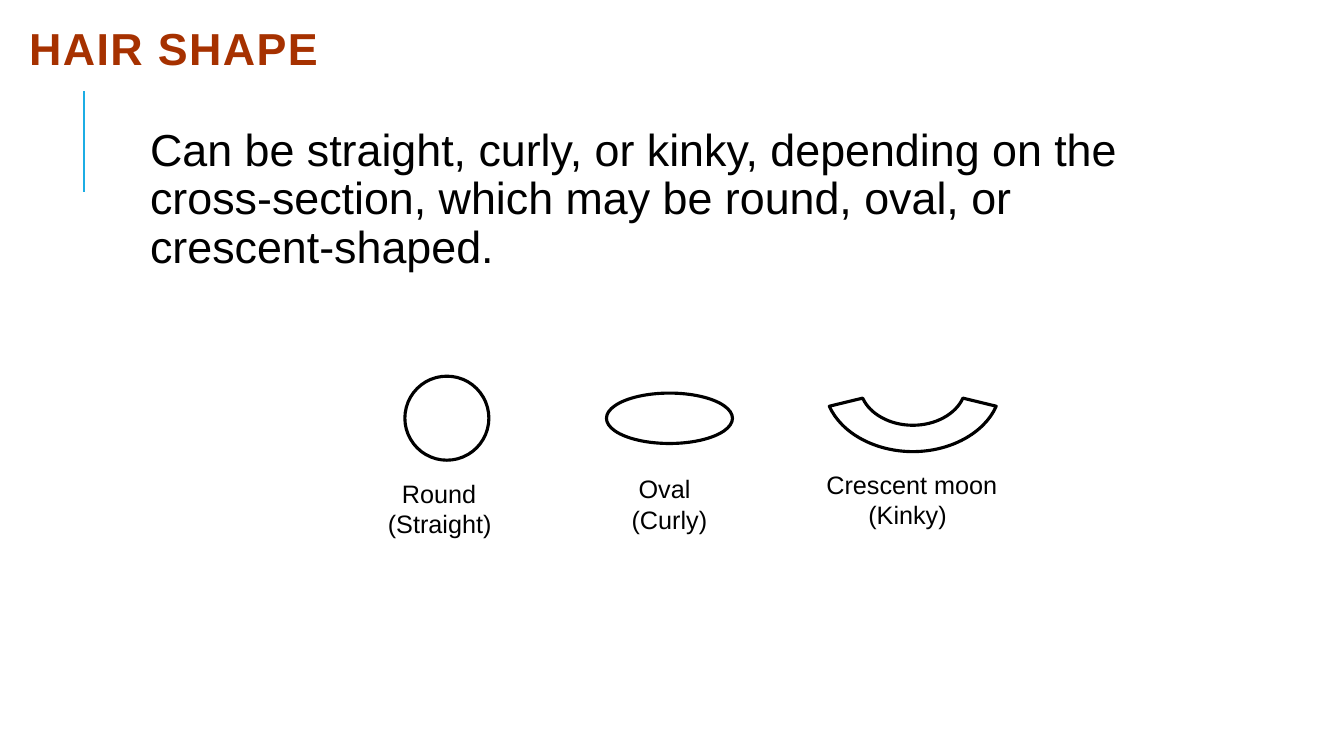
from lxml import etree
from pptx import Presentation
from pptx.dml.color import RGBColor
from pptx.enum.shapes import MSO_CONNECTOR, MSO_SHAPE
from pptx.oxml.ns import qn
from pptx.util import Pt

ELLIPSE = MSO_SHAPE.OVAL
STRAIGHT = MSO_CONNECTOR.STRAIGHT
COLORS = {"title": "A63100", "ink": "000000", "accent": "1CADE4"}
FONT = "Arial"


def add_text(page, box, lines, size, color="ink", bold=False, spacing=None,
             wrap=True, tracking=0):
    """Write (text, indent) lines into a text box and return its paragraphs."""
    frame = page.shapes.add_textbox(*map(Pt, box)).text_frame
    frame.word_wrap = wrap
    for number, (text, indent) in enumerate(lines):
        para = frame.add_paragraph() if number else frame.paragraphs[0]
        para.line_spacing = spacing
        if indent:
            para._p.get_or_add_pPr().set("marL", str(Pt(indent)))
        span = para.add_run()
        span.text = text
        span.font.name = FONT
        span.font.size = Pt(size)
        span.font.bold = bold
        span.font.color.rgb = RGBColor.from_string(COLORS[color])
        if tracking:
            span._r.get_or_add_rPr().set("spc", str(tracking * 100))
    return frame.paragraphs


def outline(shape):
    """Leave a shape unfilled with a black outline."""
    shape.shadow.inherit = False
    shape.fill.background()
    shape.line.color.rgb = RGBColor.from_string(COLORS["ink"])
    shape.line.width = Pt(2.25)


def add_ellipse(page, box):
    """Draw an outlined ellipse that fills the box."""
    outline(page.shapes.add_shape(ELLIPSE, *map(Pt, box)))


def add_crescent(page, box):
    """Draw a crescent of four curves along the bottom of the box."""
    left, top, width, height = box
    right, bottom, middle = left + width, top + height, width / 2
    builder = page.shapes.build_freeform(Pt(left), Pt(top))
    builder.add_line_segments(
        [(Pt(right), Pt(top)), (Pt(right), Pt(bottom)), (Pt(left), Pt(bottom))])
    crescent = builder.convert_to_shape()
    outline(crescent)
    inner, outer = height - 18.8, height
    steps = [
        ("moveTo", [(27.2, 57.6)]),
        ("cubicBezTo", [(32.4, 69.1), (46.8, inner), (middle, inner)]),
        ("cubicBezTo", [(79.2, inner), (93.6, 69.1), (98.8, 57.6)]),
        ("lnTo", [(122.6, 63.4)]),
        ("cubicBezTo", [(114, 82.8), (89.6, outer), (middle, outer)]),
        ("cubicBezTo", [(36.4, outer), (12, 82.8), (3.4, 63.4)]),
        ("close", []),
    ]
    contour = next(crescent._element.iter(qn("a:path")))
    for child in list(contour):
        contour.remove(child)
    for command, points in steps:
        step = etree.SubElement(contour, qn(f"a:{command}"))
        for x, y in points:
            etree.SubElement(step, qn("a:pt"), x=str(Pt(x)), y=str(Pt(y)))


def add_heading(page, box):
    """Place the slide title and the accent rule below it."""
    left, top, _, _ = box
    add_text(page, box, [("HAIR SHAPE", 0)], 32, "title", bold=True,
             spacing=0.8, tracking=1)
    x = left + 46
    rule = page.shapes.add_connector(
        STRAIGHT, Pt(x), Pt(top + 118.3), Pt(x), Pt(top + 46.3))
    rule.line.color.rgb = RGBColor.from_string(COLORS["accent"])
    rule.line.width = Pt(1.5)
    etree.SubElement(rule._element.spPr, qn("a:effectLst"))


def add_body(page, box):
    """Place the explanatory paragraph."""
    text = ("Can be straight, curly, or kinky, depending on the cross-section, "
            "which may be round, oval, or crescent-shaped.")
    para = add_text(page, box, [(text, 0)], 32, spacing=0.9)[0]
    para.space_before = Pt(12)
    para.space_after = Pt(2)


def add_cross_sections(page, box):
    """Place the three hair outlines with their captions."""
    left, top, _, _ = box
    sections = [
        (add_ellipse, (19.2, 41.9, 60, 60), (0, 111, 89.3, 51.1),
         [("Round", 10), ("(Straight)", 0)]),
        (add_ellipse, (163.2, 54, 90, 36), (174.1, 108, 72, 52.6),
         [("Oval", 5), ("(Curly)", 0)]),
        (add_crescent, (319, 0, 126, 95.8), (313.2, 104.8, 137.5, 51.1),
         [("Crescent moon", 0), ("(Kinky)", 30)]),
    ]
    for draw, (x, y, *size), (label_x, label_y, *label_size), lines in sections:
        draw(page, (left + x, top + y, *size))
        add_text(page, (left + label_x, top + label_y, *label_size), lines, 18,
                 wrap=False)


def main():
    """Build the hair shape slide and save it."""
    deck = Presentation()
    deck.slide_width, deck.slide_height = Pt(960), Pt(540)
    page = deck.slides.add_slide(deck.slide_layouts[6])
    add_heading(page, (13.7, 18.7, 365, 59.8))
    add_body(page, (100.1, 87.8, 718, 115.2))
    add_cross_sections(page, (270, 226.8, 450.7, 162.1))
    deck.save("out.pptx")


if __name__ == "__main__":
    main()
